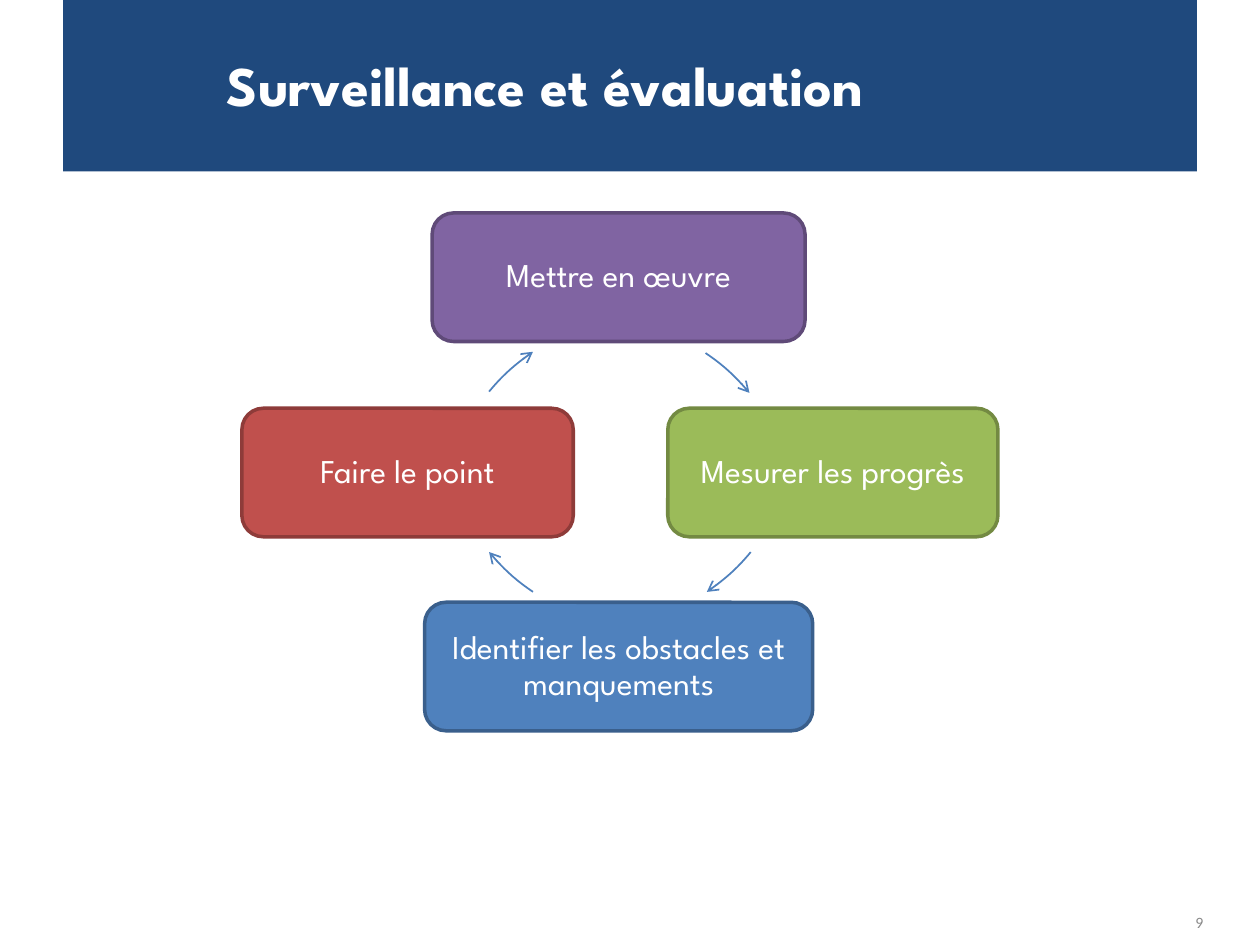
from lxml.etree import SubElement
from pptx import Presentation
from pptx.dml.color import RGBColor
from pptx.enum.shapes import MSO_SHAPE as Preset
from pptx.enum.text import MSO_ANCHOR as Anchor, MSO_AUTO_SIZE as AutoSize, PP_ALIGN as Align
from pptx.oxml.ns import qn
from pptx.util import Inches, Pt

COLORS = {
    "navy": "1F497D", "white": "FFFFFF", "gray": "898989",
    "blue": "4F81BD", "blue_edge": "3A5F8C",
    "purple": "8064A2", "purple_edge": "5F4A78",
    "green": "9BBB59", "green_edge": "738A42",
    "red": "C0504D", "red_edge": "8E3B39",
}
FONT = "League Spartan"

# Steps of the cycle, clockwise from the top: text, colour, left, top, width
STEPS = [
    ("Mettre en œuvre", "purple", 3.43, 1.69, 2.96),
    ("Mesurer les progrès", "green", 5.3, 3.24, 2.62),
    ("Identifier les obstacles et manquements", "blue", 3.37, 4.78, 3.08),
    ("Faire le point", "red", 1.92, 3.24, 2.63),
]
STEP_HEIGHT = 1.02

# Arrows between steps: left and top of the full circle, start angle in degrees
ARROWS = [(2.96, 2.51, 304.2), (2.97, 1.61, 39.8), (3.49, 1.61, 124.2), (3.49, 2.5, 219.8)]
CIRCLE = 3.38
SWEEP = 16


def color(name):
    return RGBColor.from_string(COLORS[name])


def place(shape, box):
    shape.left, shape.top, shape.width, shape.height = (Inches(n) for n in box)


def write(shape, text, size, font=FONT, ink="white", bold=False,
          align=Align.CENTER, margins=(0.08, 0.08, 0.08, 0.08), spacing=1.0):
    frame = shape.text_frame
    frame.word_wrap = True
    frame.auto_size = AutoSize.NONE
    frame.vertical_anchor = Anchor.MIDDLE
    (frame.margin_left, frame.margin_top,
     frame.margin_right, frame.margin_bottom) = (Inches(n) for n in margins)
    para = frame.paragraphs[0]
    para.alignment = align
    para.line_spacing = spacing
    span = para.add_run()
    span.text = text
    span.font.name = font
    span.font.size = Pt(size)
    span.font.bold = bold
    span.font.color.rgb = color(ink)


def add_title(page, box):
    title = page.shapes.title
    place(title, box)
    title.fill.solid()
    title.fill.fore_color.rgb = color("navy")
    write(title, "Surveillance et évaluation", 32, bold=True,
          align=Align.LEFT, margins=(1.3, 0.05, 0.3, 0.05))


def add_step(page, box, text, tint):
    step = page.shapes.add_shape(Preset.ROUNDED_RECTANGLE, *(Inches(n) for n in box))
    step.shadow.inherit = False
    step.fill.solid()
    step.fill.fore_color.rgb = color(tint)
    step.line.color.rgb = color(tint + "_edge")
    step.line.width = Pt(2)
    write(step, text, 19, spacing=0.9)


def add_arrow(page, box, start):
    arrow = page.shapes.add_shape(Preset.ARC, *(Inches(n) for n in box))
    arrow.shadow.inherit = False
    # Angles are stored in 60000ths of a degree, adjustments in 100000ths
    for index, angle in enumerate((start, start + SWEEP)):
        arrow.adjustments[index] = angle * 0.6
    arrow.fill.background()
    arrow.line.color.rgb = color("blue")
    arrow.line.width = Pt(1)
    SubElement(arrow.line._get_or_add_ln(), qn("a:tailEnd"), type="arrow")


def add_cycle(page):
    for (text, tint, left, top, width), (x, y, start) in zip(STEPS, ARROWS):
        add_step(page, (left, top, width, STEP_HEIGHT), text, tint)
        add_arrow(page, (x, y, CIRCLE, CIRCLE), start)


def add_page_number(page, box):
    number = page.shapes.add_textbox(*(Inches(n) for n in box))
    write(number, "9", 9, font="Calibri", ink="gray", align=Align.RIGHT,
          margins=(0.07, 0.04, 0.07, 0.04))


def main():
    deck = Presentation()
    deck.slide_width, deck.slide_height = Inches(10), Inches(7.5)
    page = deck.slides.add_slide(deck.slide_layouts[5])
    add_page_number(page, (7.29, 7.12, 2.33, 0.4))
    add_title(page, (0.5, -0.03, 9, 1.39))
    add_cycle(page)
    deck.save("out.pptx")


if __name__ == "__main__":
    main()
